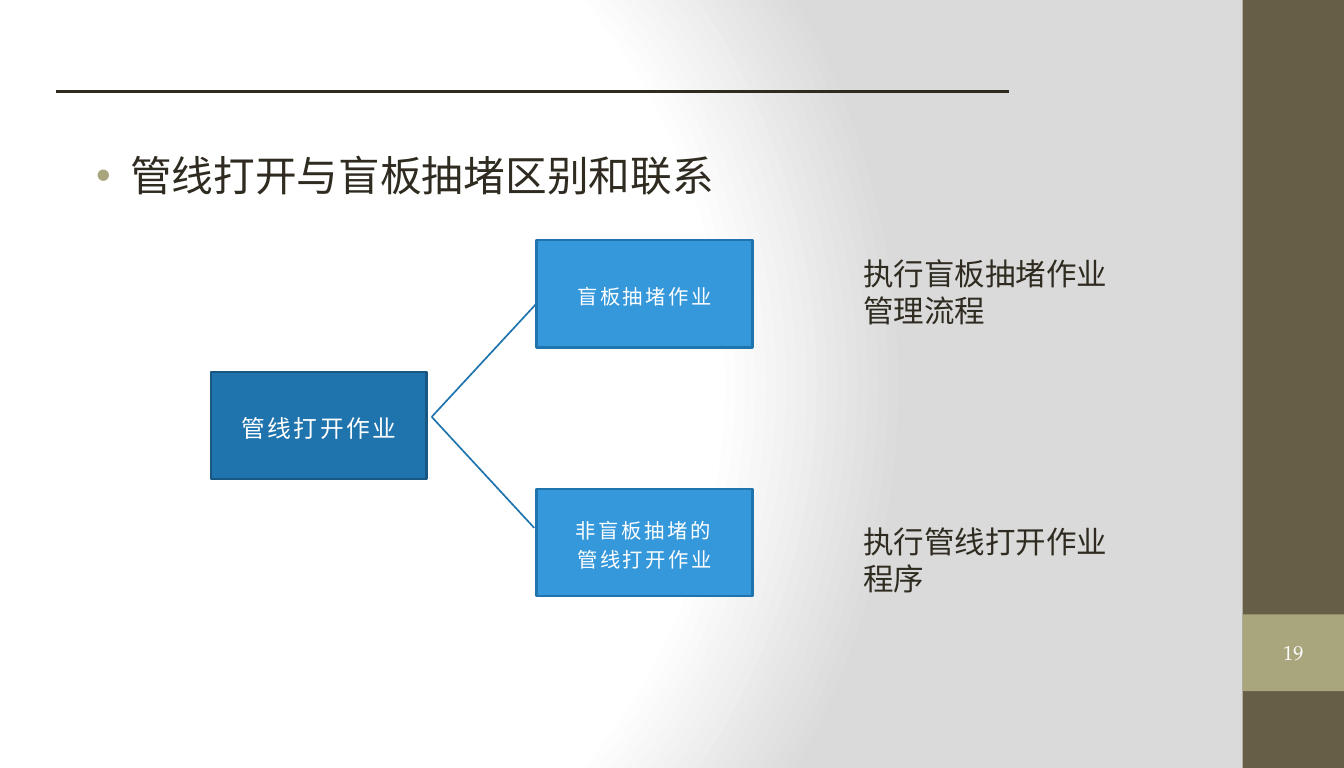
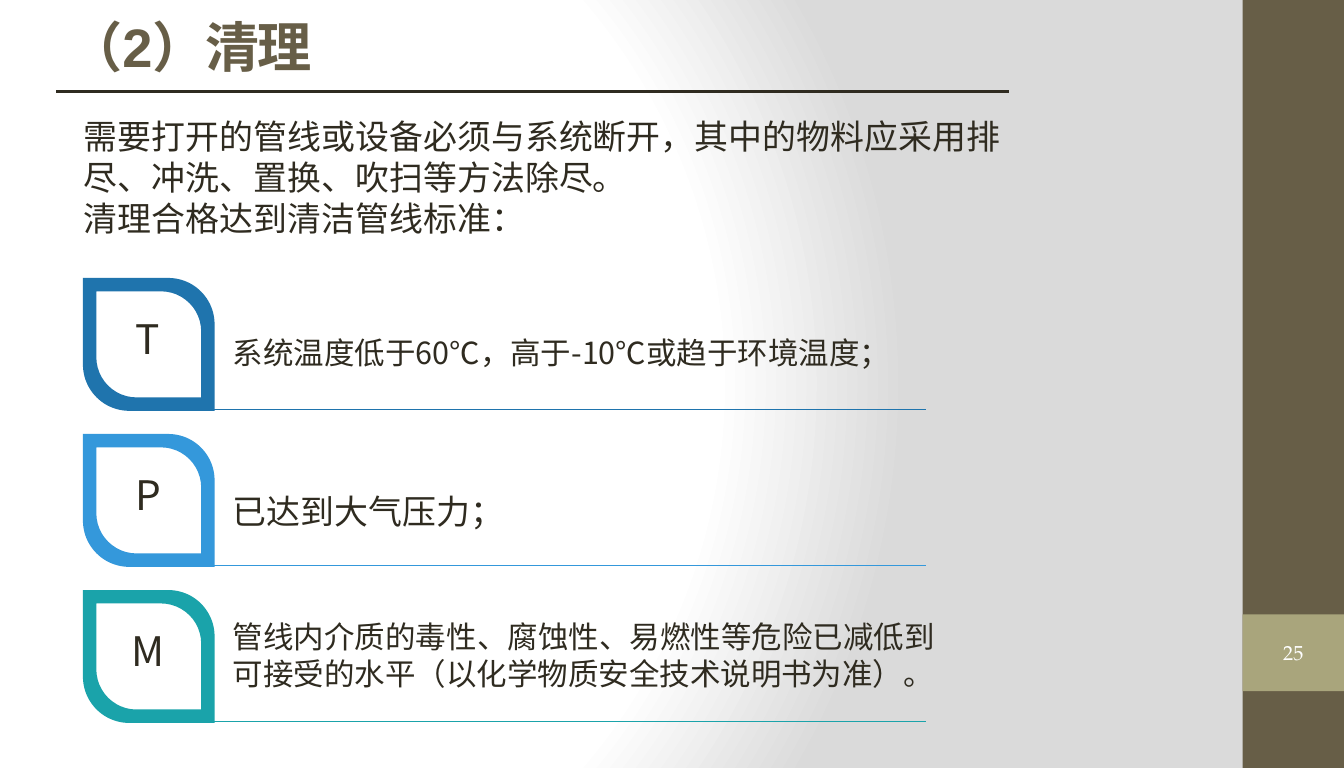
from pptx import Presentation
from pptx.dml.color import RGBColor
from pptx.enum.shapes import MSO_CONNECTOR, MSO_SHAPE
from pptx.enum.text import MSO_ANCHOR as Anchor, PP_ALIGN as Align
from pptx.oxml import parse_xml
from pptx.oxml.ns import nsdecls, qn
from pptx.util import Inches, Pt
from lxml.etree import SubElement

WHITE = RGBColor(0xFF, 0xFF, 0xFF)
INK = RGBColor(0x2F, 0x2B, 0x20)
BROWN = RGBColor(0x67, 0x5E, 0x47)
OLIVE = RGBColor(0xA9, 0xA5, 0x7C)
NAVY = RGBColor(0x17, 0x57, 0x82)
BLUE = RGBColor(0x1F, 0x74, 0xAD)
SKY = RGBColor(0x34, 0x98, 0xDB)
TEAL = RGBColor(0x1A, 0xA3, 0xAA)
SANS = "Noto Sans CJK SC"
SERIF = "TeX Gyre Pagella"
LEAD = 1.21

prs = Presentation()
prs.slide_width, prs.slide_height = Inches(11.02), Inches(6.3)

# Shared background
master = prs.slide_master
master.background.fill.solid()
back = master.element.find(".//" + qn("p:bgPr"))
back.replace(back[0], parse_xml(
    f'<a:gradFill {nsdecls("a")} rotWithShape="1"><a:gsLst>'
    '<a:gs pos="0"><a:srgbClr val="FFFFFF"/></a:gs>'
    '<a:gs pos="75000"><a:srgbClr val="FFFFFF"/></a:gs>'
    '<a:gs pos="100000"><a:srgbClr val="DADADA"/></a:gs></a:gsLst>'
    '<a:path path="circle"><a:fillToRect l="20000" t="50000" r="100000" b="50000"/></a:path>'
    '</a:gradFill>'))


def write(slide, text, at, size, font=SANS, color=INK, bold=False, align=Align.LEFT,
          anchor=Anchor.TOP, lead=1, track=0, bullet=None, fill=None, line=None, side=0.1):
    """Add a text box, or a rectangle if fill is given; newlines part paragraphs."""
    box = [Inches(v) for v in at]
    if fill is None:
        shape = slide.shapes.add_textbox(*box)
    else:
        shape = slide.shapes.add_shape(MSO_SHAPE.RECTANGLE, *box)
        shape.shadow.inherit = False
        shape.fill.solid()
        shape.fill.fore_color.rgb = fill
        if line is None:
            shape.line.fill.background()
        else:
            shape.line.color.rgb = line
            shape.line.width = Pt(1.5)
    if not text:
        return
    frame = shape.text_frame
    frame.word_wrap = True
    frame.vertical_anchor = anchor
    frame.margin_left = frame.margin_right = Inches(side)
    frame.text = text
    for par in frame.paragraphs:
        par.alignment = align
        par.line_spacing = Pt(size * LEAD * lead)
        if bullet is not None:
            props = par._p.get_or_add_pPr()
            props.set("marL", str(Inches(0.42)))
            props.set("indent", str(Inches(-0.28)))
            tint = SubElement(props, qn("a:buClr"))
            SubElement(tint, qn("a:srgbClr")).set("val", str(bullet))
            SubElement(props, qn("a:buFont")).set("typeface", "Arial")
            SubElement(props, qn("a:buChar")).set("char", "•")
        for run in par.runs:
            run.font.size, run.font.bold = Pt(size), bold
            run.font.color.rgb = color
            run.font.name = font
            look = run._r.get_or_add_rPr()
            SubElement(look, qn("a:ea")).set("typeface", SANS)
            if track:
                look.set("spc", str(round(track * 100)))


def rule(slide, x1, y1, x2, y2, color, width):
    """Draw a straight line without shadow."""
    line = slide.shapes.add_connector(
        MSO_CONNECTOR.STRAIGHT, *[Inches(v) for v in (x1, y1, x2, y2)])
    line.line.color.rgb = color
    line.line.width = Pt(width)
    SubElement(line._element.spPr, qn("a:effectLst"))


# Shared side band, page number and title line
pages = []
for number in ("19", "25"):
    slide = prs.slides.add_slide(prs.slide_layouts[6])
    write(slide, "", (10.19, 0, 0.83, 6.3), 12, fill=BROWN)
    write(slide, number, (10.19, 5.04, 0.83, 0.63), 12, font=SERIF, color=WHITE,
          align=Align.CENTER, anchor=Anchor.MIDDLE, fill=OLIVE)
    rule(slide, 0.46, 0.75, 8.27, 0.75, INK, 2.25)
    pages.append(slide)
tree, clean = pages

# Slide 1: which procedure applies
write(tree, "管线打开与盲板抽堵区别和联系", (0.55, 1.18, 9.19, 0.6), 24.6,
      font=SERIF, bullet=OLIVE)
for x, y in ((4.39, 2.5), (4.38, 4.33)):
    rule(tree, 3.54, 3.42, x, y, BLUE, 1)
for text, x, y, size, fill, line in (
        ("管线打开作业", 1.73, 3.05, 14, BLUE, NAVY),
        ("盲板抽堵作业", 4.4, 1.97, 12, SKY, BLUE),
        ("非盲板抽堵的管线打开作业", 4.4, 4.01, 12, SKY, BLUE)):
    write(tree, text, (x, y, 1.77, 0.88), size, color=WHITE, align=Align.CENTER,
          anchor=Anchor.MIDDLE, lead=1.2, track=1.5, fill=fill, line=line, side=0.23)
for text, y in (("执行盲板抽堵作业管理流程", 2.04), ("执行管线打开作业程序", 4.24)):
    write(tree, text, (6.98, y, 2.33, 0.71), 18, font=SERIF)

# Slide 2: cleaning standard
write(clean, "（2）清理", (0.46, 0, 7.81, 0.75), 32, font="Arial", color=BROWN,
      bold=True, anchor=Anchor.MIDDLE, track=-1)
write(clean, "需要打开的管线或设备必须与系统断开，其中的物料应采用排尽、冲洗、置换、吹扫等方法除尽。\n"
      "清理合格达到清洁管线标准：", (0.59, 0.9, 7.85, 1.11), 20)

LEFT, TOP, STEP, WIDE, HIGH = 0.68, 2.28, 1.28, 1.08, 1.09
items = (
    ("T", "系统温度低于60℃，高于-10℃或趋于环境温度；", BLUE, 18, 0.35, 6.05, 1.2, Align.LEFT),
    ("P", "已达到大气压力；", SKY, 20, 0.35, 5.38, 1.2, Align.LEFT),
    ("M", "管线内介质的毒性、腐蚀性、易燃性等危险已减低到可接受的水平（以化学物质安全技术说明书为准）。",
     TEAL, 18, 0.18, 5.96, 1, Align.JUSTIFY))
for i, (mark, text, color, size, drop, width, lead, align) in enumerate(items):
    top = TOP + i * STEP

    # Leaf ring: two outlines, each round at top right and bottom left
    rings = []
    for inset, r in ((0, 0.38), (0.11, 0.33)):
        x1, y1 = LEFT + inset, top + inset
        x2, y2 = LEFT + WIDE - inset, top + HIGH - inset
        ring = [(x1, y1), (x2 - r, y1), (x2, y1 + r),
                (x2, y2), (x1 + r, y2), (x1, y2 - r)]
        rings.append([(Inches(x), Inches(y)) for x, y in ring])
    outer, inner = rings
    inner[1:] = inner[:0:-1]
    outline = clean.shapes.build_freeform(*outer[0], scale=1.0)
    outline.add_line_segments(outer[1:], close=True)
    outline.move_to(*inner[0])
    outline.add_line_segments(inner[1:], close=True)
    leaf = outline.convert_to_shape()

    # Turn the segments across the round corners into quarter arcs
    sides = list(leaf._element.iter(qn("a:lnTo")))
    for k, r, start, sweep in ((1, 0.38, 270, 90), (4, 0.38, 90, 90),
                               (6, 0.33, 180, -90), (9, 0.33, 0, -90)):
        arc = parse_xml(f'<a:arcTo {nsdecls("a")} wR="{Inches(r)}" hR="{Inches(r)}" '
                        f'stAng="{start * 60000}" swAng="{sweep * 60000}"/>')
        sides[k].getparent().replace(sides[k], arc)
    leaf.shadow.inherit = False
    leaf.fill.solid()
    leaf.fill.fore_color.rgb = color
    leaf.line.fill.background()

    rule(clean, 1.57, top + 1.08, 7.59, top + 1.08, color, 0.5)
    write(clean, text, (1.81, top + drop, width, 0.73), size, lead=lead, align=align)
    write(clean, mark, (0.88, top + 0.24, 0.67, 0.5), 24, align=Align.CENTER)

prs.save("out.pptx")
